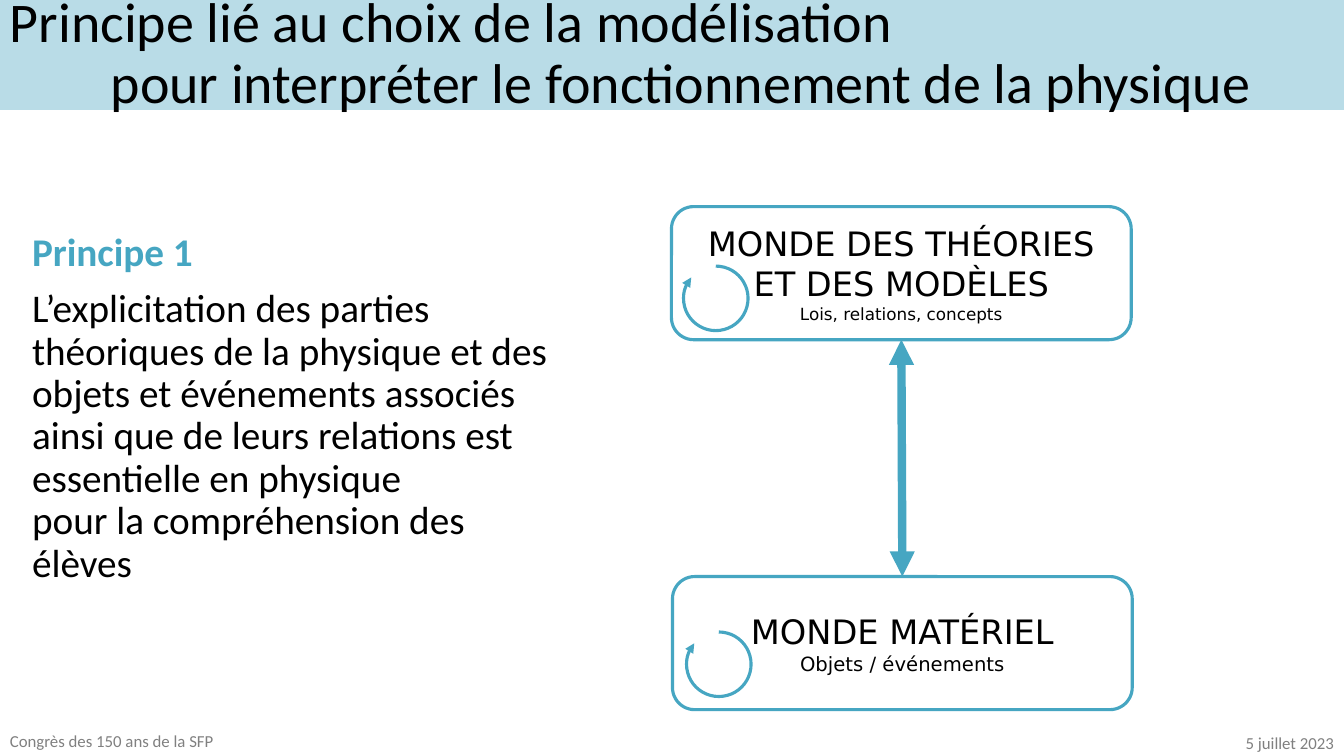
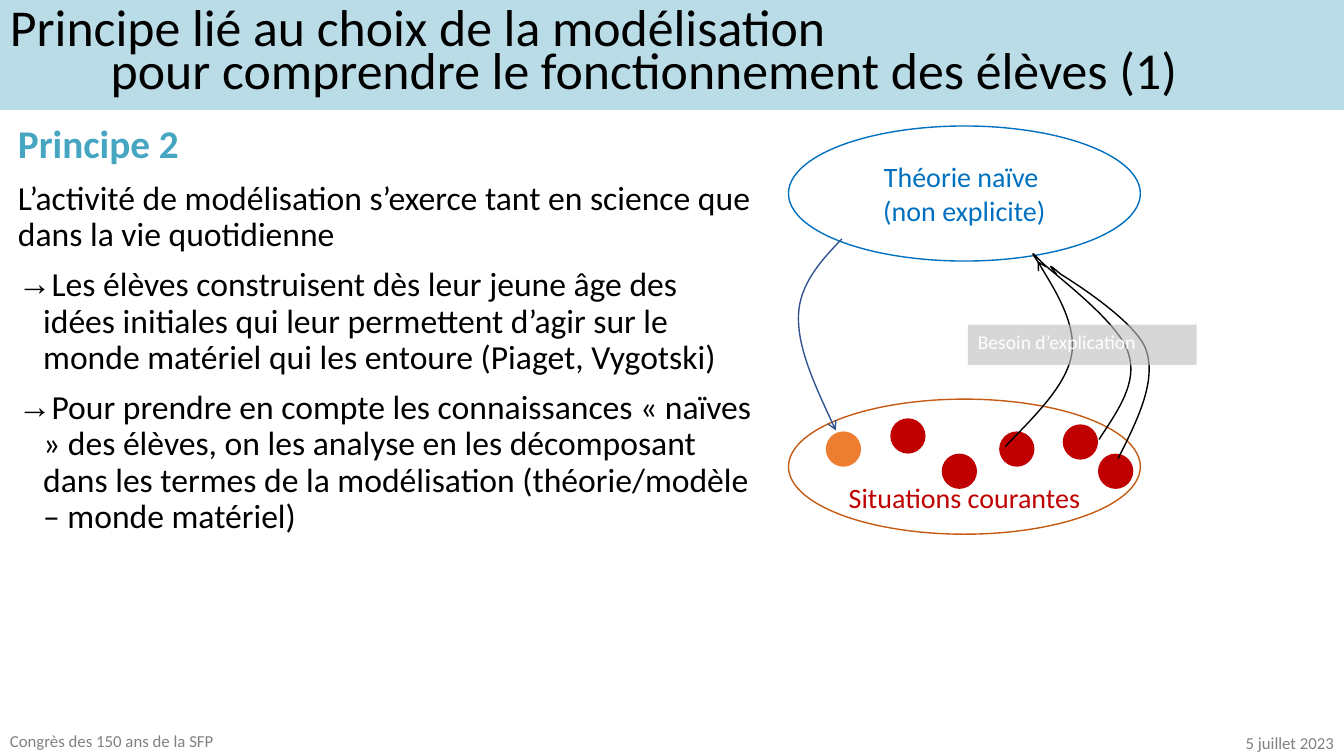
from lxml import etree
from pptx import Presentation
from pptx.dml.color import RGBColor
from pptx.enum.shapes import MSO_CONNECTOR, MSO_SHAPE
from pptx.enum.text import MSO_ANCHOR, MSO_AUTO_SIZE, PP_ALIGN
from pptx.oxml.ns import qn
from pptx.util import Inches, Pt

RECT, ROUND = MSO_SHAPE.RECTANGLE, MSO_SHAPE.ROUNDED_RECTANGLE
OVAL, ARC = MSO_SHAPE.OVAL, MSO_SHAPE.ARC
TOP, MIDDLE, BOTTOM = MSO_ANCHOR.TOP, MSO_ANCHOR.MIDDLE, MSO_ANCHOR.BOTTOM
LEFT, CENTER, RIGHT = PP_ALIGN.LEFT, PP_ALIGN.CENTER, PP_ALIGN.RIGHT

BLACK = RGBColor(0x00, 0x00, 0x00)
WHITE = RGBColor(0xFF, 0xFF, 0xFF)
GRAY = RGBColor(0x80, 0x80, 0x80)
LABEL_GRAY = RGBColor(0xBF, 0xBF, 0xBF)
BAND = RGBColor(0xB9, 0xDC, 0xE7)
TEAL = RGBColor(0x46, 0xA6, 0xC2)
BLUE = RGBColor(0x00, 0x70, 0xC0)
NAVY = RGBColor(0x32, 0x54, 0x91)
BROWN = RGBColor(0xC5, 0x5A, 0x11)
ORANGE = RGBColor(0xED, 0x7D, 0x31)
RED = RGBColor(0xC0, 0x00, 0x00)

BODY = {"line_spacing": 0.9, "space_before": Pt(10)}
HEADING = {"size": Pt(28), "bold": True}


def add(s, kind, box, fill=None, line=None, width=1):
    """Add a preset shape, or a text box when kind is None."""
    box = [Inches(v) for v in box]
    if kind is None:
        return s.shapes.add_textbox(*box)
    sp = s.shapes.add_shape(kind, *box)
    sp.shadow.inherit = False
    if fill is None:
        sp.fill.background()
    else:
        sp.fill.solid()
        sp.fill.fore_color.rgb = fill
    if line is None:
        sp.line.fill.background()
    else:
        sp.line.color.rgb = line
        sp.line.width = Pt(width)
    return sp


def write(sp, paras, anchor=MIDDLE, font="Calibri", **layout):
    """Fill a shape with (text, colour, font values) paragraphs."""
    tf = sp.text_frame
    tf.word_wrap = True
    tf.vertical_anchor = anchor
    for i, (text, color, values) in enumerate(paras):
        p = tf.add_paragraph() if i else tf.paragraphs[0]
        p.text = text
        for name, value in {"alignment": LEFT, **layout}.items():
            setattr(p, name, value)
        for r in p.runs:
            r.font.color.rgb = color
            for name, value in {"name": font, **values}.items():
                setattr(r.font, name, value)
    return tf


prs = Presentation()
prs.slide_width, prs.slide_height = Inches(13.33), Inches(7.5)

titles = [
    ("pour interpréter le fonctionnement de la physique", 40, 0.9),
    ("pour comprendre le fonctionnement des élèves (1)", 37, 0.7),
]
slides = []
for second_line, size, spacing in titles:
    s = prs.slides.add_slide(prs.slide_layouts[6])
    slides.append(s)
    small = {"size": Pt(12)}
    write(add(s, None, (0, 7.13, 3, 0.43)),
          [("Congrès des 150 ans de la SFP", GRAY, small)])
    write(add(s, None, (10.33, 7.15, 3, 0.43)),
          [("5 juillet 2023", GRAY, small)], alignment=RIGHT)
    lines = ["Principe lié au choix de la modélisation", "\t" + second_line]
    tf = write(add(s, RECT, (0, 0, 13.33, 1.09), BAND),
               [(t, BLACK, {"size": Pt(size)}) for t in lines], line_spacing=spacing)
    tabs = etree.SubElement(tf.paragraphs[1]._p.get_or_add_pPr(), qn("a:tabLst"))
    etree.SubElement(tabs, qn("a:tab"), pos=str(Inches(1)), algn="l")

arrows = []  # (shape, ends that carry a head, head type)

# Slide 1: the two worlds
s = slides[0]
write(add(s, None, (0.22, 2.26, 5.36, 4.76)), [
    ("Principe 1", TEAL, HEADING),
    ("L’explicitation des parties théoriques de la physique et des objets et "
     "événements associés ainsi que de leurs relations est essentielle en "
     "physique \npour la compréhension des élèves", BLACK, {"size": Pt(28)}),
], TOP, **BODY)

worlds = []
for left, top, name, detail, size, arc_at in [
    (6.66, 2.05, "MONDE DES THÉORIES ET DES MODÈLES", "Lois, relations, concepts", 12,
     (6.78, 2.64)),
    (6.67, 5.72, "MONDE MATÉRIEL", "Objets / événements", 14, (6.81, 6.27)),
]:
    world = add(s, ROUND, (left, top, 4.56, 1.32), line=TEAL, width=2.25)
    write(world, [(name, BLACK, {"size": Pt(24)}), (detail, BLACK, {"size": Pt(size)})],
          font="DejaVu Sans", alignment=CENTER)
    worlds.append(world)
    loop = add(s, ARC, (*arc_at, 0.64, 0.64), line=TEAL, width=2.25)
    loop.adjustments[0], loop.adjustments[1] = 162, 132.29
    arrows.append((loop, ["tailEnd"], "triangle"))

link = s.shapes.add_connector(MSO_CONNECTOR.STRAIGHT, 0, 0, 0, 0)
link.begin_connect(worlds[0], 2)
link.end_connect(worlds[1], 0)
link.line.color.rgb = TEAL
link.line.width = Pt(6)
etree.SubElement(link._element.spPr, qn("a:effectLst"))
arrows.append((link, ["headEnd", "tailEnd"], "triangle"))

# Slide 2: naive theory and everyday situations
s = slides[1]
plain = {"size": Pt(24)}
tf = write(add(s, None, (0.08, 1.19, 7.48, 4.76)), [
    ("Principe 2", TEAL, HEADING),
    ("L’activité de modélisation s’exerce tant en science que dans la vie quotidienne",
     BLACK, plain),
    ("Les élèves construisent dès leur jeune âge des idées initiales qui leur permettent "
     "d’agir sur le monde matériel qui les entoure (Piaget, Vygotski)", BLACK, plain),
    ("Pour prendre en compte les connaissances « naïves » des élèves, on les analyse en "
     "les décomposant dans les termes de la modélisation (théorie/modèle – monde matériel)",
     BLACK, plain),
], TOP, **BODY)
for p in tf.paragraphs[2:]:
    pPr = p._p.get_or_add_pPr()
    pPr.set("marL", str(Inches(0.25)))
    pPr.set("indent", str(-Inches(0.25)))
    etree.SubElement(pPr, qn("a:buFont"), typeface="Arial")
    etree.SubElement(pPr, qn("a:buChar"), char="→")

theory = add(s, OVAL, (7.82, 1.25, 3.49, 1.34), line=BLUE)
write(theory, [(t, BLUE, {"size": Pt(20)}) for t in ("Théorie naïve ", "(non explicite)")],
      alignment=CENTER)
situations = add(s, OVAL, (7.82, 3.96, 3.49, 1.34), line=BROWN)
tf = write(situations, [("Situations courantes", RED, {"size": Pt(20)})],
           BOTTOM, alignment=CENTER)
tf.margin_left = tf.margin_right = tf.margin_bottom = 0

for x, y, color in [(8.19, 4.28, ORANGE), (8.83, 4.15, RED), (9.91, 4.28, RED),
                    (10.54, 4.21, RED), (10.89, 4.5, RED), (9.34, 4.5, RED)]:
    add(s, OVAL, (x, y, 0.35, 0.35), color)

# Each curve: colour, arrowhead, start, then Bézier points (control, control, end)
curves = [
    (BLACK, True, (9.97, 4.43), [
        (10.27, 4.12), (10.58, 3.82), (10.63, 3.51),
        (10.68, 3.2), (10.29, 2.59), (10.29, 2.59)]),
    (BLACK, False, (10.9, 4.36), [
        (11.09, 4.07), (11.29, 3.79), (11.19, 3.5),
        (11.1, 3.2), (10.48, 2.74), (10.33, 2.6),
        (10.19, 2.45), (10.25, 2.53), (10.31, 2.62)]),
    (BLACK, False, (11.09, 4.55), [
        (11.28, 4.17), (11.47, 3.79), (11.37, 3.48),
        (11.28, 3.18), (10.52, 2.72), (10.52, 2.72),
        (10.37, 2.59), (10.42, 2.65), (10.48, 2.72)]),
    (NAVY, True, (8.35, 2.37), [
        (8.14, 2.59), (7.93, 2.82), (7.92, 3.13),
        (7.91, 3.45), (8.1, 3.86), (8.29, 4.27)]),
]
for color, has_head, start, points in curves:
    outline = s.shapes.build_freeform(Inches(start[0]), Inches(start[1]))
    outline.add_line_segments([(Inches(x), Inches(y)) for x, y in points], close=False)
    curve = outline.convert_to_shape()
    # Turn every three line segments into one Bézier piece
    segments = list(curve._element.iter(qn("a:lnTo")))
    outline_xml = segments[0].getparent()
    for i in range(0, len(segments), 3):
        bezier = etree.SubElement(outline_xml, qn("a:cubicBezTo"))
        for segment in segments[i:i + 3]:
            bezier.append(segment[0])
            outline_xml.remove(segment)
    curve.shadow.inherit = False
    curve.fill.background()
    curve.line.color.rgb = color
    curve.line.width = Pt(1)
    if has_head:
        arrows.append((curve, ["tailEnd"], "arrow"))

label = add(s, RECT, (9.6, 3.22, 2.27, 0.4), LABEL_GRAY)
tf = write(label, [("Besoin d’explication", WHITE, {"size": Pt(14)})], TOP)
tf.auto_size = MSO_AUTO_SIZE.SHAPE_TO_FIT_TEXT
fill_color = label._element.spPr.find(qn("a:solidFill"))[0]
etree.SubElement(fill_color, qn("a:alpha"), val="62000")

for sp, ends, head in arrows:
    ln = sp._element.spPr.find(qn("a:ln"))
    for end in ends:
        etree.SubElement(ln, qn("a:" + end), type=head)

prs.save("out.pptx")
